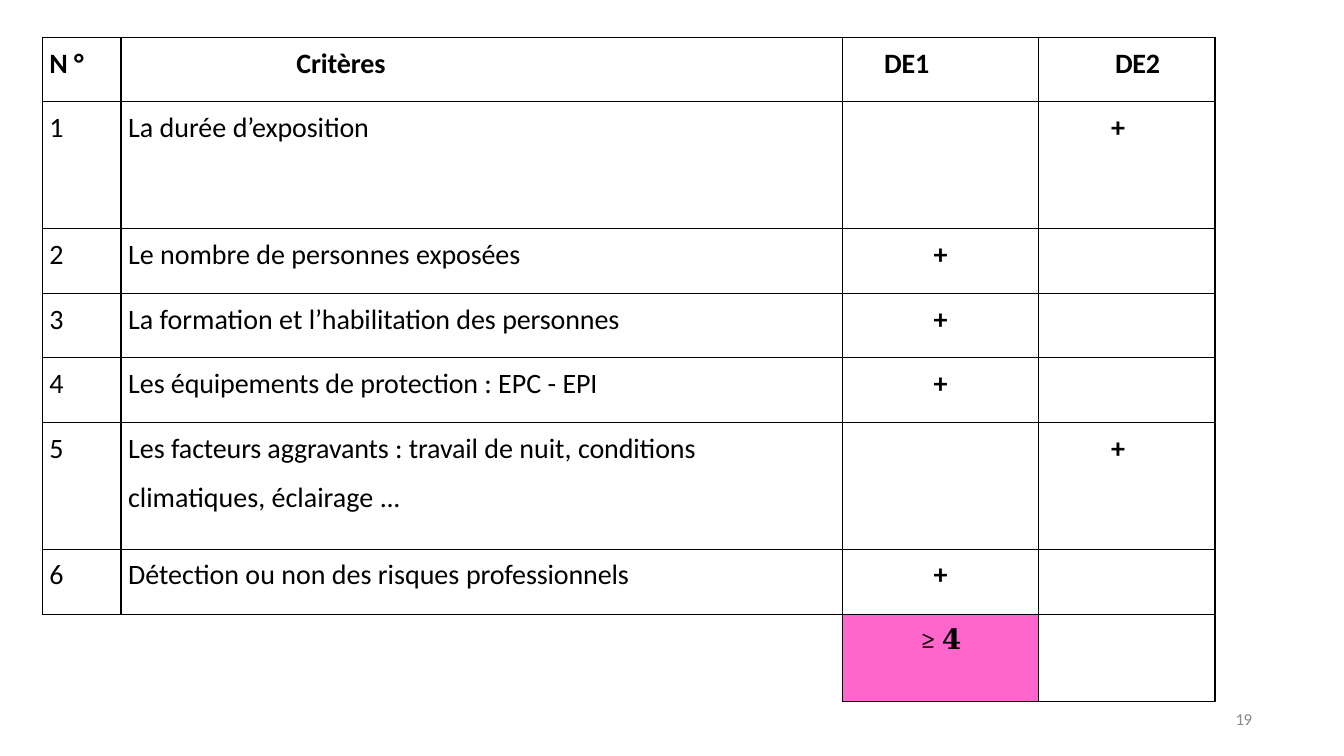
from lxml import etree
from pptx import Presentation
from pptx.dml.color import RGBColor
from pptx.enum.text import MSO_ANCHOR, PP_ALIGN
from pptx.oxml.ns import qn
from pptx.util import Emu, Pt

CENTER, RIGHT = PP_ALIGN.CENTER, PP_ALIGN.RIGHT
MIDDLE = MSO_ANCHOR.MIDDLE

BLACK, GREY, PINK = "000000", "888888", "FF66CC"
COLUMNS = [78, 716, 194, 175]
ROWS = [64, 126, 64, 64, 64, 126, 65, 86]
HEADER_INDENTS = [7, 174, 41, 76]
TEXT_INDENT, PLUS_INDENT = 7, 72

# Runs are (text, letter spacing in points)
HEADERS = [
    [("N ", 0), ("°", -0.5)],
    [("Critères", -0.1)],
    [("DE1", -0.2)],
    [("DE2", -0.2)],
]
# Each criterion: its lines of runs, and the column that gets the plus
CRITERIA = [
    ([[("La durée ", 0), ("d’exposition", -0.1)]], 3),
    ([[("Le nombre de personnes ", 0), ("exposées", -0.1)]], 2),
    ([[("La formation et ", 0), ("l’habilitation ", -0.1), ("des ", 0),
       ("personnes", -0.1)]], 2),
    ([[("Les", 0), (" équipements ", -0.1), ("de ", 0), ("protection ", -0.1),
       (": EPC - ", 0), ("EPI", -0.2)]], 2),
    ([[("Les ", 0), ("facteurs aggravants ", -0.1), (": ", 0),
       ("travail ", -0.1), ("de nuit, ", 0), ("conditions", -0.1)],
      [("climatiques, éclairage ", 0), ("...", -0.2)]], 3),
    ([[("Détection ou non des risques ", 0), ("professionnels", -0.1)]], 2),
]


def px(length):
    """100 px to the inch."""
    return Emu(length * 9144)


def color(value):
    return RGBColor.from_string(value)


def add_run(para, text, spacing=0, size=20, bold=False, font="Calibri", ink=BLACK):
    run = para.add_run()
    run.text = text
    run.font.size = Pt(size)
    run.font.bold = bold
    run.font.name = font
    run.font.color.rgb = color(ink)
    if spacing:
        run.font._element.set("spc", str(round(spacing * 100)))


def write_cell(cell, lines, indent=0, align=None, bold=False, font="Calibri"):
    frame = cell.text_frame
    for index, runs in enumerate(lines):
        para = frame.add_paragraph() if index else frame.paragraphs[0]
        if index:
            para.space_before = Pt(10.8)
        if indent:
            para._p.get_or_add_pPr().set("marL", str(px(indent)))
        if align is not None:
            para.alignment = align
        for text, spacing in runs:
            add_run(para, text, spacing, bold=bold, font=font)


def format_cell(cell, sides):
    """Clear fill, tight margins, and a 1 pt line on the given sides."""
    cell.margin_left = cell.margin_right = cell.margin_bottom = 0
    cell.margin_top = px(9)
    properties = cell._tc.get_or_add_tcPr()
    for side in "LRTB":
        line = etree.SubElement(properties, qn(f"a:ln{side}"), w=str(Pt(1)))
        if side in sides:
            fill = etree.SubElement(line, qn("a:solidFill"))
            etree.SubElement(fill, qn("a:srgbClr"), val=BLACK)
        else:
            etree.SubElement(line, qn("a:noFill"))
    cell.fill.background()


def add_criteria_table(page, left, top):
    frame = page.shapes.add_table(len(ROWS), len(COLUMNS), px(left), px(top),
                                  px(sum(COLUMNS)), px(sum(ROWS)))
    table = frame.table
    table.first_row = table.horz_banding = False
    for column, width in zip(table.columns, COLUMNS):
        column.width = px(width)
    for row, height in zip(table.rows, ROWS):
        row.height = px(height)

    # Grid, open at the lower left
    last = len(ROWS) - 1
    open_sides = {(last, 0): "T", (last, 1): "TR"}
    for row in range(len(ROWS)):
        for column in range(len(COLUMNS)):
            format_cell(table.cell(row, column),
                        open_sides.get((row, column), "LRTB"))
    table.cell(last, 0).merge(table.cell(last, 1))

    # Header row
    for column, runs in enumerate(HEADERS):
        write_cell(table.cell(0, column), [runs], HEADER_INDENTS[column], bold=True)

    # Criteria rows
    for number, (lines, plus_column) in enumerate(CRITERIA, 1):
        write_cell(table.cell(number, 0), [[(str(number), -0.5)]], TEXT_INDENT)
        write_cell(table.cell(number, 1), lines, TEXT_INDENT)
        centred = plus_column == 2
        write_cell(table.cell(number, plus_column), [[("+", -0.5)]],
                   0 if centred else PLUS_INDENT,
                   CENTER if centred else None, bold=True)

    # Total
    total = table.cell(last, 2)
    write_cell(total, [[("≥ ", 0), ("𝟒", -0.5)]], align=CENTER, font="Cambria")
    total.fill.solid()
    total.fill.fore_color.rgb = color(PINK)


def add_page_number(page, left, top, width, height):
    box = page.shapes.add_textbox(px(left), px(top), px(width), px(height))
    frame = box.text_frame
    frame.word_wrap = True
    frame.vertical_anchor = MIDDLE
    frame.margin_left = frame.margin_right = 0
    frame.margin_top = frame.margin_bottom = 0
    para = frame.paragraphs[0]
    para.alignment = RIGHT
    para.line_spacing = Pt(12.4)
    add_run(para, "19", -0.2, size=12, ink=GREY)


def main():
    deck = Presentation()
    deck.slide_width, deck.slide_height = px(1333), px(750)
    page = deck.slides.add_slide(deck.slide_layouts[6])
    add_page_number(page, 942, 695, 300, 40)
    add_criteria_table(page, 42, 37)
    deck.save("out.pptx")


if __name__ == "__main__":
    main()
